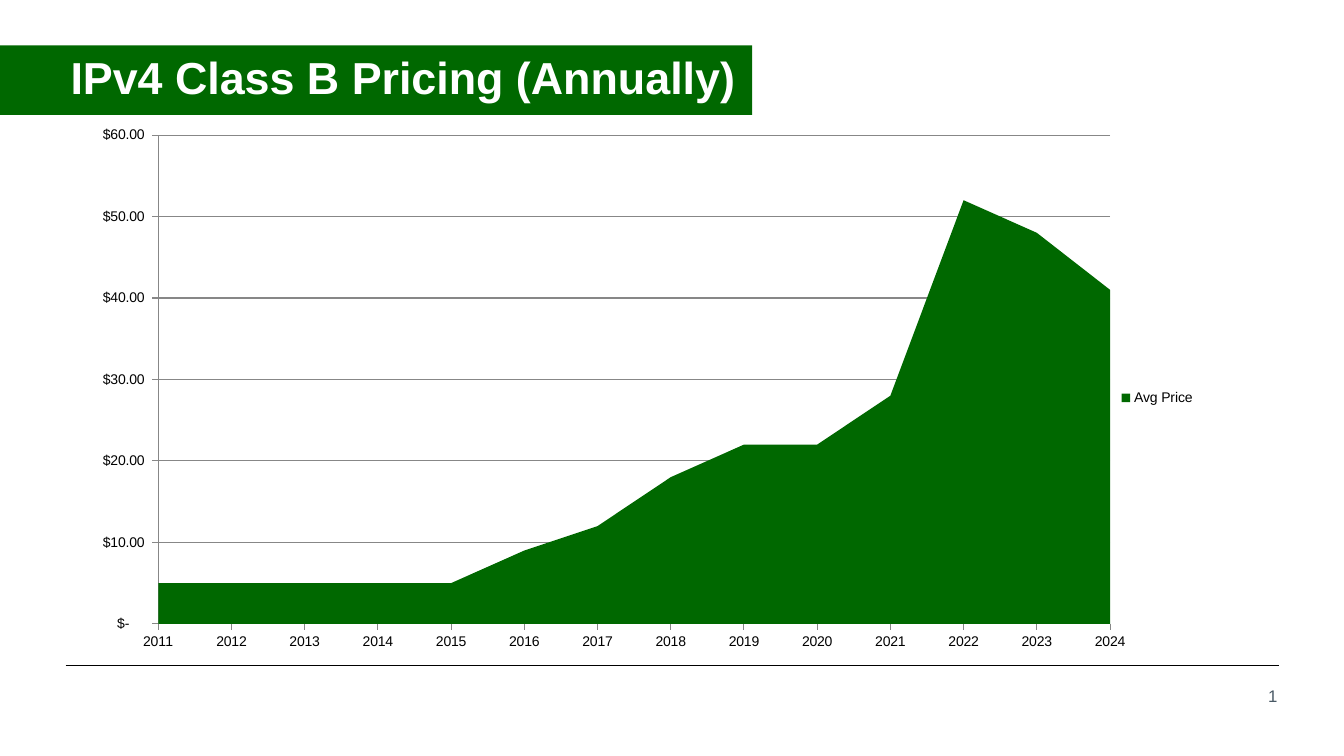
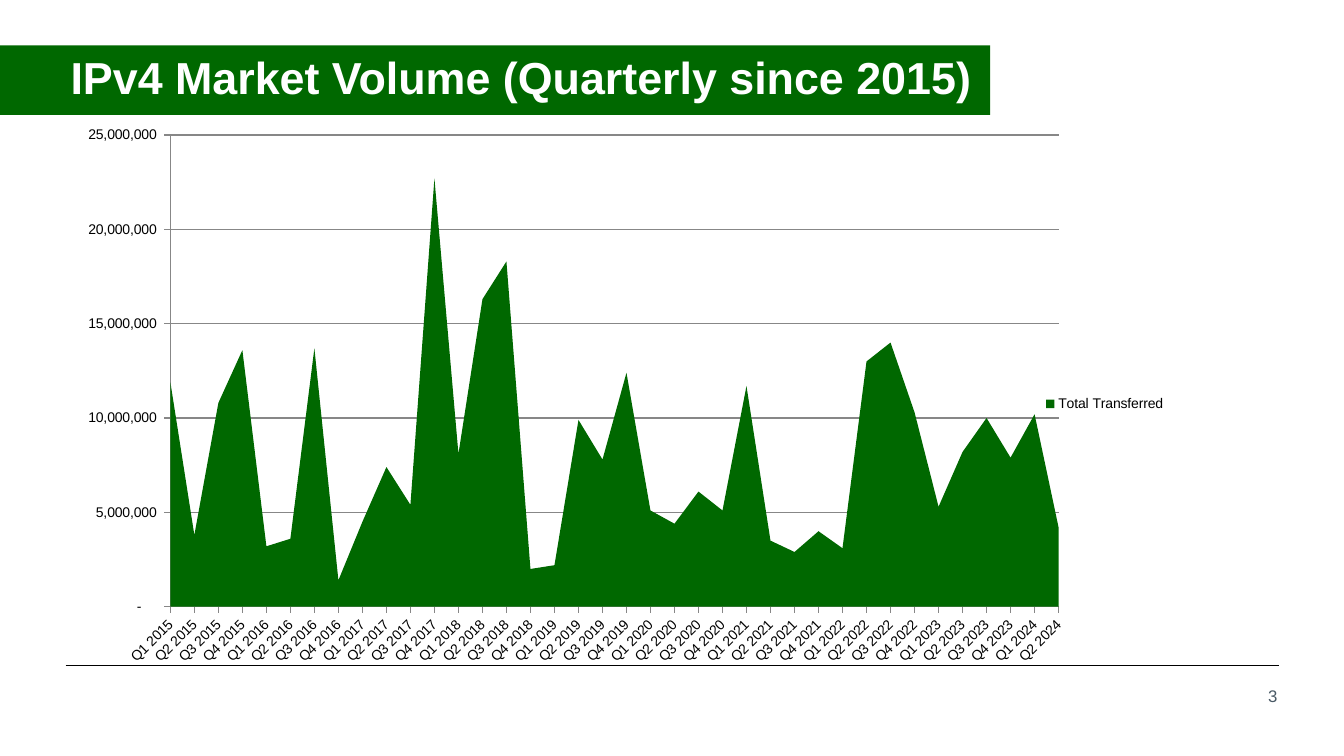
from lxml import etree
from pptx import Presentation
from pptx.chart.data import CategoryChartData
from pptx.dml.color import RGBColor
from pptx.enum import chart as ch, shapes, text
from pptx.oxml import ns
from pptx.util import Inches, Pt

COLORS = {"green": "006800", "white": "FFFFFF", "black": "000000",
          "gray": "495965", "grid": "878787"}
FONT = "Arial"
YEARS = [str(year) for year in range(2011, 2025)]
QUARTERS = [f"Q{q} {year}" for year in range(2015, 2025) for q in range(1, 5)][:38]
PRICES = [5, 5, 5, 5, 5, 9, 12, 18, 22, 22, 28, 52, 48, 41]
MILLIONS = [11.9, 3.8, 10.8, 13.6, 3.2, 3.6, 13.7, 1.4, 4.5, 7.4, 5.4, 22.7, 8.1,
            16.3, 18.3, 2, 2.2, 9.9, 7.8, 12.4, 5.1, 4.4, 6.1, 5.1, 11.7, 3.5,
            2.9, 4, 3.1, 13, 14, 10.3, 5.3, 8.2, 10, 7.9, 10.2, 4.2]
VOLUMES = [round(value * 1_000_000) for value in MILLIONS]
DOLLARS = r'_("$"* #,##0.00_);_("$"* \(#,##0.00\);_("$"* "-"??_);_(@_)'
COUNTS = r'_(* #,##0_);_(* \(#,##0\);_(* "-"??_);_(@_)'


def rgb(name):
    """Return a named palette colour."""
    return RGBColor.from_string(COLORS[name])


def style_font(font, size, color, bold=False):
    """Set the typeface, size, colour and weight of a font."""
    font.name, font.size, font.bold = FONT, Pt(size), bold
    font.color.rgb = rgb(color)


def add_text(sp, words, margins, size, color, bold=False, align=text.PP_ALIGN.LEFT):
    """Write one vertically centred line into a shape."""
    tf = sp.text_frame
    tf.word_wrap = False
    tf.vertical_anchor = text.MSO_ANCHOR.MIDDLE
    tf.margin_left, tf.margin_top, tf.margin_right, tf.margin_bottom = map(Inches, margins)
    p = tf.paragraphs[0]
    p.alignment = align
    r = p.add_run()
    r.text = words
    style_font(r.font, size, color, bold)
    return p


def add_title(s, words, width):
    """Add the green title band that starts at the left edge."""
    sp = s.shapes.add_shape(shapes.MSO_SHAPE.RECTANGLE, 0, Inches(0.45),
                            Inches(width), Inches(0.69))
    sp.shadow.inherit = False
    sp.fill.solid()
    sp.fill.fore_color.rgb = rgb("green")
    sp.line.fill.background()
    p = add_text(sp, words, (0.7, 0.1, 0.1, 0.1), 32, "white", bold=True)
    p.line_spacing = 0.9


def add_footer(s, number):
    """Add the footer rule and the page number."""
    rule = s.shapes.add_connector(shapes.MSO_CONNECTOR.STRAIGHT, Inches(0.65),
                                  Inches(6.6), Inches(12.69), Inches(6.6))
    rule.line.color.rgb = rgb("black")
    rule.line.width = Pt(1)
    etree.SubElement(rule._element.spPr, ns.qn("a:effectLst"))
    sp = s.shapes.add_textbox(Inches(9.67), Inches(6.7), Inches(3), Inches(0.4))
    add_text(sp, str(number), (0, 0.05, 0, 0.05), 12, "gray", align=text.PP_ALIGN.RIGHT)


def set_layout(parent, index, box, inches):
    """Place a chart part, given in inches from the corner of the chart box."""
    for old in parent.findall(ns.qn("c:layout")):
        parent.remove(old)
    layout = etree.Element(ns.qn("c:layout"))
    manual = etree.SubElement(layout, ns.qn("c:manualLayout"))
    sizes = (box[2], box[3]) * 2
    settings = {"xMode": "edge", "yMode": "edge"}
    settings.update((tag, part / size) for tag, part, size in zip("xywh", inches, sizes))
    if "w" in settings:
        settings = {"layoutTarget": "inner", **settings}
    for tag, value in settings.items():
        etree.SubElement(manual, ns.qn(f"c:{tag}")).set("val", str(value))
    parent.insert(index, layout)


def style_axis(axis):
    """Give an axis outside ticks, a gray line and black labels."""
    axis.major_tick_mark = ch.XL_TICK_MARK.OUTSIDE
    axis.minor_tick_mark = ch.XL_TICK_MARK.NONE
    axis.format.line.color.rgb = rgb("grid")
    axis.format.line.width = Pt(0.75)
    style_font(axis.tick_labels.font, 10, "black")


def add_area_chart(s, box, cats, name, values, top, step, fmt, plot, legend, turn):
    """Add a one-series area chart with its legend at the right."""
    data = CategoryChartData(number_format=fmt)
    data.categories = cats
    data.add_series(name, values)
    chart = s.shapes.add_chart(ch.XL_CHART_TYPE.AREA_STACKED, *map(Inches, box), data).chart
    style_font(chart.font, 10, "black")
    chart.has_title = False
    chart.has_legend = True
    chart.legend.position = ch.XL_LEGEND_POSITION.RIGHT
    chart.legend.include_in_layout = False
    style_font(chart.legend.font, 10, "black")
    chart.plots[0].vary_by_categories = False
    fill = chart.plots[0].series[0].format.fill
    fill.solid()
    fill.fore_color.rgb = rgb("green")

    cat_axis, val_axis = chart.category_axis, chart.value_axis
    for axis in (cat_axis, val_axis):
        style_axis(axis)
    cat_axis.has_major_gridlines = False
    body = cat_axis._element.find(ns.qn("c:txPr")).find(ns.qn("a:bodyPr"))
    body.set("rot", str(turn * 60000))
    val_axis.minimum_scale, val_axis.maximum_scale = 0, top
    val_axis.major_unit = step
    val_axis.has_major_gridlines = True
    val_axis.major_gridlines.format.line.color.rgb = rgb("grid")
    val_axis.major_gridlines.format.line.width = Pt(0.75)
    val_axis.tick_labels.number_format = fmt
    val_axis.tick_labels.number_format_is_linked = False
    val_axis._element.find(ns.qn("c:crossBetween")).set("val", "midCat")

    set_layout(chart._chartSpace.chart.plotArea, 0, box, plot)
    set_layout(chart.legend._element, 1, box, legend)


def add_chart_slide(prs, number, title, width, **chart):
    """Add a slide with a title band, a footer and one area chart."""
    s = prs.slides.add_slide(prs.slide_layouts[6])
    add_footer(s, number)
    add_title(s, title, width)
    add_area_chart(s, **chart)


def main():
    """Build and save the presentation."""
    prs = Presentation()
    prs.slide_width, prs.slide_height = Inches(13.33), Inches(7.5)
    add_chart_slide(prs, 1, "IPv4 Class B Pricing (Annually)", 7.46,
                    box=(0.75, 1.15, 11.52, 5.4), cats=YEARS, name="Avg Price",
                    values=PRICES, top=60, step=10, fmt=DOLLARS,
                    plot=(0.82, 0.19, 9.44, 4.85), legend=(10.33, 2.68), turn=0)
    add_chart_slide(prs, 3, "IPv4 Market Volume (Quarterly since 2015)", 9.82,
                    box=(0.61, 1.15, 11.52, 5.56), cats=QUARTERS,
                    name="Total Transferred", values=VOLUMES, top=25_000_000,
                    step=5_000_000, fmt=COUNTS, plot=(1.08, 0.19, 8.81, 4.68),
                    legend=(9.72, 2.74), turn=-45)
    prs.save("out.pptx")


if __name__ == "__main__":
    main()
